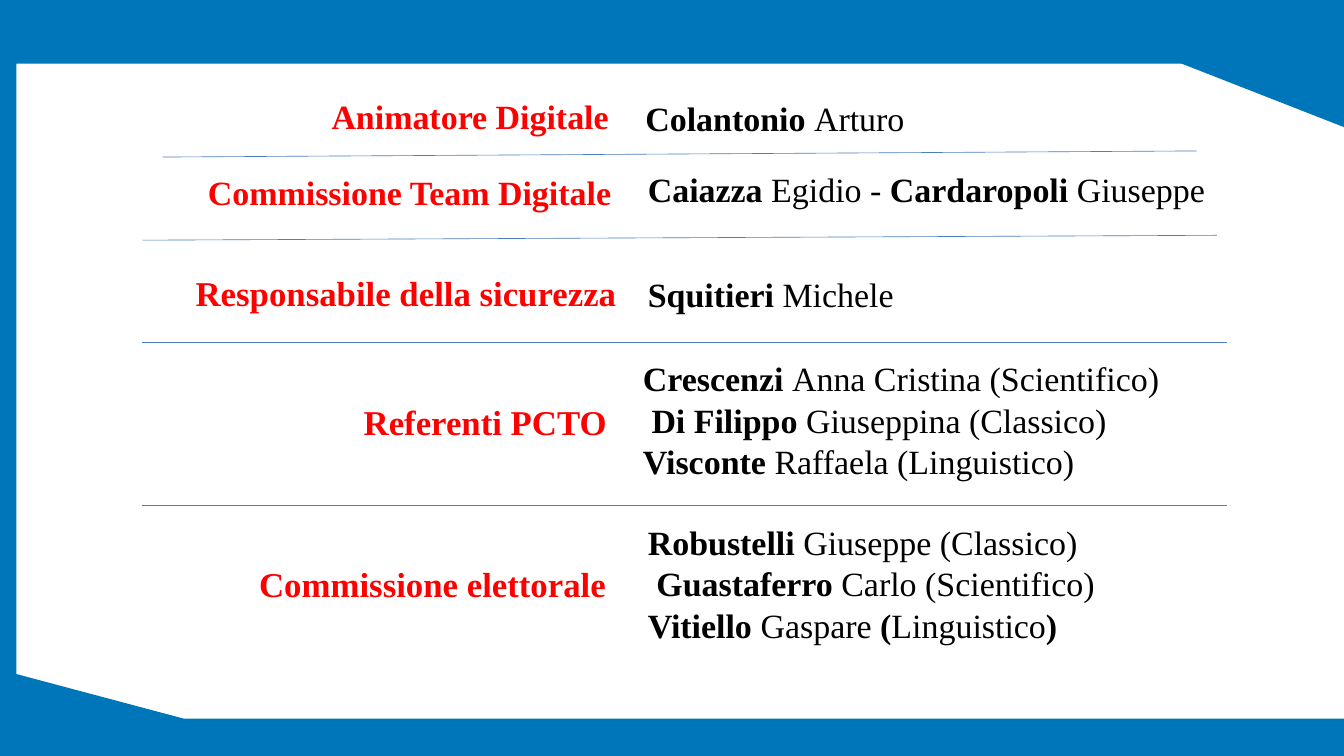
from dataclasses import dataclass

from lxml.etree import SubElement
from pptx import Presentation
from pptx.dml.color import RGBColor
from pptx.enum.shapes import MSO_CONNECTOR
from pptx.enum.text import PP_ALIGN
from pptx.oxml.ns import qn
from pptx.slide import Slide
from pptx.util import Inches, Pt

BLUE = RGBColor(0x00, 0x76, 0xBA)
RULE_BLUE = RGBColor(0x4B, 0x7E, 0xBC)
RED = RGBColor(0xFF, 0x00, 0x00)
BLACK = RGBColor(0x00, 0x00, 0x00)
FONT = "Times New Roman"
WIDTH, HEIGHT = 21.99, 12.37
SECOND_LINE_INDENT = 0.15

Point = tuple[float, float]


@dataclass(frozen=True)
class Area:
    left: float
    top: float
    width: float
    height: float
    top_inset: float = 0


@dataclass(frozen=True)
class Role:
    """A role and its holders; each holder alternates bold and regular spans."""
    label: str
    label_area: Area
    label_size: int
    label_align: PP_ALIGN
    holders: list[tuple[str, ...]]
    holders_area: Area


FRAME = [(WIDTH, 11.76), (3.01, 11.76), (0.27, 11.03), (0.27, 1.04),
         (WIDTH, 1.04), (WIDTH, 0), (0, 0), (0, HEIGHT), (WIDTH, HEIGHT)]
CORNER = [(WIDTH, 0.07), (16.85, 0.07), (WIDTH, 2.08)]

ROLES = [
    Role("Animatore Digitale", Area(1.04, 1.27, 8.92, 0.98, 0.3), 40, PP_ALIGN.RIGHT,
         [("Colantonio ", "Arturo")], Area(10.55, 1.39, 9.74, 0.88, 0.2)),
    Role("Commissione Team Digitale", Area(1.08, 2.51, 8.92, 0.98, 0.3), 40, PP_ALIGN.RIGHT,
         [("Caiazza ", "Egidio - ", "Cardaropoli ", "Giuseppe")],
         Area(10.59, 2.56, 9.74, 0.88, 0.2)),
    Role("Responsabile della sicurezza", Area(3.19, 4.44, 7.25, 0.7, 0.01), 41, PP_ALIGN.LEFT,
         [("Squitieri ", "Michele")], Area(10.59, 4.47, 4.83, 0.69, 0.01)),
    Role("Referenti PCTO", Area(5.94, 6.54, 4.03, 0.72, 0.02), 41, PP_ALIGN.LEFT,
         [("Crescenzi ", "Anna Cristina (Scientifico)"),
          ("Di Filippo ", "Giuseppina (Classico)"),
          ("Visconte ", "Raffaela (Linguistico)")], Area(10.51, 5.84, 9.82, 2.02)),
    Role("Commissione elettorale", Area(4.23, 9.18, 5.74, 0.72, 0.02), 41, PP_ALIGN.LEFT,
         [("Robustelli ", "Giuseppe (Classico)"),
          ("Guastaferro ", "Carlo (Scientifico)"),
          ("Vitiello ", "Gaspare", " (", "Linguistico", ")")], Area(10.59, 8.52, 9.24, 2.02)),
]

RULES = [((2.66, 2.57), (19.58, 2.47)), ((2.33, 3.93), (19.91, 3.85)),
         ((2.33, 5.6), (20.08, 5.6)), ((2.33, 8.27), (20.08, 8.27))]


def add_outline(page: Slide, points: list[Point]) -> None:
    start, *rest = [(Inches(x), Inches(y)) for x, y in points]
    builder = page.shapes.build_freeform(*start, scale=1.0)
    builder.add_line_segments(rest, close=True)
    shape = builder.convert_to_shape()
    shape.shadow.inherit = False
    shape.fill.solid()
    shape.fill.fore_color.rgb = BLUE
    shape.line.fill.background()


def add_rule(page: Slide, start: Point, end: Point) -> None:
    rule = page.shapes.add_connector(MSO_CONNECTOR.STRAIGHT,
                                     *(Inches(value) for value in start + end))
    rule.line.color.rgb = RULE_BLUE
    rule.line.width = Pt(0.75)
    SubElement(rule._element.spPr, qn("a:effectLst"))


def add_text(page: Slide, area: Area, lines: list[tuple[str, ...]], size: int,
             color: RGBColor, align: PP_ALIGN = PP_ALIGN.LEFT) -> None:
    """Write one paragraph per line, with every other span in bold."""
    box = page.shapes.add_textbox(Inches(area.left), Inches(area.top),
                                  Inches(area.width), Inches(area.height))
    frame = box.text_frame
    frame.word_wrap = True
    frame.margin_left = frame.margin_right = frame.margin_bottom = 0
    frame.margin_top = Inches(area.top_inset)
    for index, spans in enumerate(lines):
        para = frame.add_paragraph() if index else frame.paragraphs[0]
        para.alignment = align
        if len(lines) > 1:
            para.line_spacing = 1.02
        indent = SECOND_LINE_INDENT if index == 1 else 0.01
        para._p.get_or_add_pPr().set("marL", str(Inches(indent)))
        para.font.name = FONT
        para.font.size = Pt(size)
        para.font.color.rgb = color
        for position, text in enumerate(spans):
            span = para.add_run()
            span.text = text
            span.font.bold = position % 2 == 0


def main() -> None:
    deck = Presentation()
    deck.slide_width, deck.slide_height = Inches(WIDTH), Inches(HEIGHT)
    page = deck.slides.add_slide(deck.slide_layouts.get_by_name("Blank"))
    for points in (FRAME, CORNER):
        add_outline(page, points)
    for start, end in RULES:
        add_rule(page, start, end)
    for role in ROLES:
        add_text(page, role.label_area, [(role.label,)], role.label_size, RED, role.label_align)
        add_text(page, role.holders_area, role.holders, 40, BLACK)
    deck.save("out.pptx")


if __name__ == "__main__":
    main()
